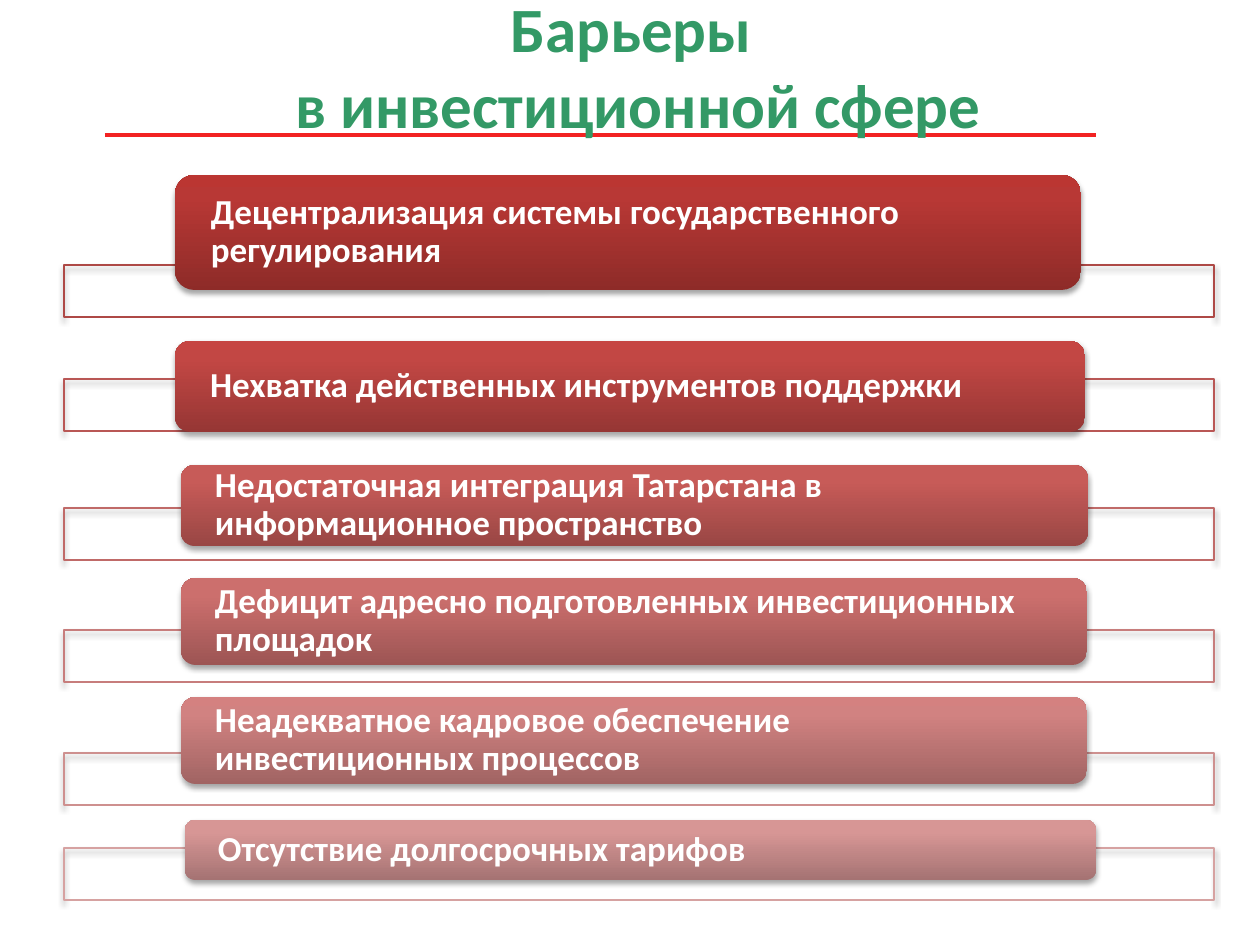
"""Build the slide that lists the barriers in the investment sphere."""
from dataclasses import dataclass

import pptx
import pptx.dml.color
import pptx.enum.shapes
import pptx.enum.text
import pptx.oxml
import pptx.oxml.ns
import pptx.util

EMU_PER_PX = 914400 / 126
SHAPES = pptx.enum.shapes.MSO_SHAPE
ALIGN = pptx.enum.text.PP_ALIGN


@dataclass(frozen=True)
class Theme:
    """Colours, font and type sizes of the slide."""

    font: str = "Calibri"
    title_size: int = 36
    body_size: int = 20
    title: str = "339966"
    rule: str = "F22222"
    body: str = "FFFFFF"
    shadow: str = "000000"


THEME = Theme()

# text, frame top, frame colour, card (left, top, width, height), gradient from bottom to top
BARRIERS = [
    ("Децентрализация системы государственного регулирования", 265, "AE4946",
     (175, 175, 906, 115), ("8E2B28", "B83835", "BB3632")),
    ("Нехватка действенных инструментов поддержки", 379, "B95755",
     (175, 341, 910, 91), ("963634", "C24744", "C64542")),
    ("Недостаточная интеграция Татарстана в информационное пространство", 508, "C06A68",
     (181, 465, 907, 81), ("994644", "C75B58", "CA5957")),
    ("Дефицит адресно подготовленных инвестиционных площадок", 630, "C77D7C",
     (181, 578, 906, 87), ("9D5554", "CC6F6D", "CF6D6B")),
    ("Неадекватное кадровое обеспечение инвестиционных процессов", 753, "CE908F",
     (181, 697, 906, 87), ("A16463", "D18281", "D48180")),
    ("Отсутствие долгосрочных тарифов", 848, "D6A2A1",
     (185, 820, 911, 60), ("A57373", "D79695", "D99594")),
]


def px(length):
    """Turn pixels into EMU."""
    return pptx.util.Emu(round(length * EMU_PER_PX))


def rgb(value):
    """Turn a hex string into a colour."""
    return pptx.dml.color.RGBColor.from_string(value)


def make_element(markup):
    """Make a drawing element from markup whose root declares the namespace."""
    name, rest = markup[1:].split(">", 1)
    return pptx.oxml.parse_xml(f"<{name} {pptx.oxml.ns.nsdecls('a')}>{rest}")


def make_shadow():
    """Make an effect list with a soft shadow that falls downwards."""
    return make_element(
        '<a:effectLst><a:outerShdw blurRad="39370" dist="22860" dir="5400000" rotWithShape="0">'
        f'<a:srgbClr val="{THEME.shadow}"><a:alpha val="35000"/></a:srgbClr>'
        "</a:outerShdw></a:effectLst>")


def add_text(page, bounds, text, *, size, color, align=ALIGN.LEFT, inset=0,
             spacing=None, shadow=False):
    """Add a bold, vertically centred text box."""
    box = page.shapes.add_textbox(*map(px, bounds))
    frame = box.text_frame
    frame.word_wrap = True
    frame.vertical_anchor = pptx.enum.text.MSO_ANCHOR.MIDDLE
    frame.margin_left = frame.margin_right = px(inset)
    frame.margin_top = frame.margin_bottom = 0
    para = frame.paragraphs[0]
    para.text = text
    para.alignment = align
    if spacing:
        para.line_spacing = spacing
    for span in para.runs:
        span.font.name = THEME.font
        span.font.size = pptx.util.Pt(size)
        span.font.bold = True
        span.font.color.rgb = rgb(color)
        if shadow:
            fill = span.font._element.find(pptx.oxml.ns.qn("a:solidFill"))
            fill.addnext(make_shadow())


def add_shape(page, kind, bounds):
    """Add a preset shape with a soft shadow."""
    shape = page.shapes.add_shape(kind, *map(px, bounds))
    shape.shadow.inherit = False
    effects = shape._element.spPr.find(pptx.oxml.ns.qn("a:effectLst"))
    effects.append(make_shadow()[0])
    return shape


def add_frame(page, top, color):
    """Add the wide outlined bar behind a card."""
    frame = add_shape(page, SHAPES.RECTANGLE, (64, top, 1150, 52))
    frame.fill.background()
    frame.line.color.rgb = rgb(color)
    frame.line.width = pptx.util.Pt(0.75)


def add_card(page, bounds, colors, text):
    """Add a rounded gradient card and its text."""
    card = add_shape(page, SHAPES.ROUNDED_RECTANGLE, bounds)
    card.line.fill.background()
    stops = "".join(f'<a:gs pos="{place}"><a:srgbClr val="{color}"/></a:gs>'
                    for place, color in zip((0, 80000, 100000), colors))
    geometry = card._element.spPr.find(pptx.oxml.ns.qn("a:prstGeom"))
    geometry.addnext(make_element(
        f'<a:gradFill><a:gsLst>{stops}</a:gsLst><a:lin ang="16200000" scaled="0"/></a:gradFill>'))
    left, top, width, height = bounds
    edge = round(height * 0.05)
    add_text(page, (left + edge, top + edge, width - 2 * edge, height - 2 * edge), text,
             size=THEME.body_size, color=THEME.body, inset=30, spacing=0.9)


def add_rule(page, left, right, y):
    """Add the horizontal line under the title."""
    rule = page.shapes.add_connector(pptx.enum.shapes.MSO_CONNECTOR.STRAIGHT,
                                     px(left), px(y), px(right), px(y))
    rule.line.color.rgb = rgb(THEME.rule)
    rule.line.width = pptx.util.Pt(2.75)
    rule._element.spPr.append(make_element("<a:effectLst></a:effectLst>"))


def main():
    """Build and save the deck."""
    deck = pptx.Presentation()
    deck.slide_width, deck.slide_height = px(1260), px(945)
    page = deck.slides.add_slide(deck.slide_layouts[6])
    add_rule(page, 105, 1096, 135)
    add_text(page, (64, -14, 1134, 158), "Барьеры\v в инвестиционной сфере",
             size=THEME.title_size, color=THEME.title, align=ALIGN.CENTER, shadow=True)
    for text, frame_top, frame_color, bounds, colors in BARRIERS:
        add_frame(page, frame_top, frame_color)
        add_card(page, bounds, colors, text)
    deck.save("out.pptx")


if __name__ == "__main__":
    main()
